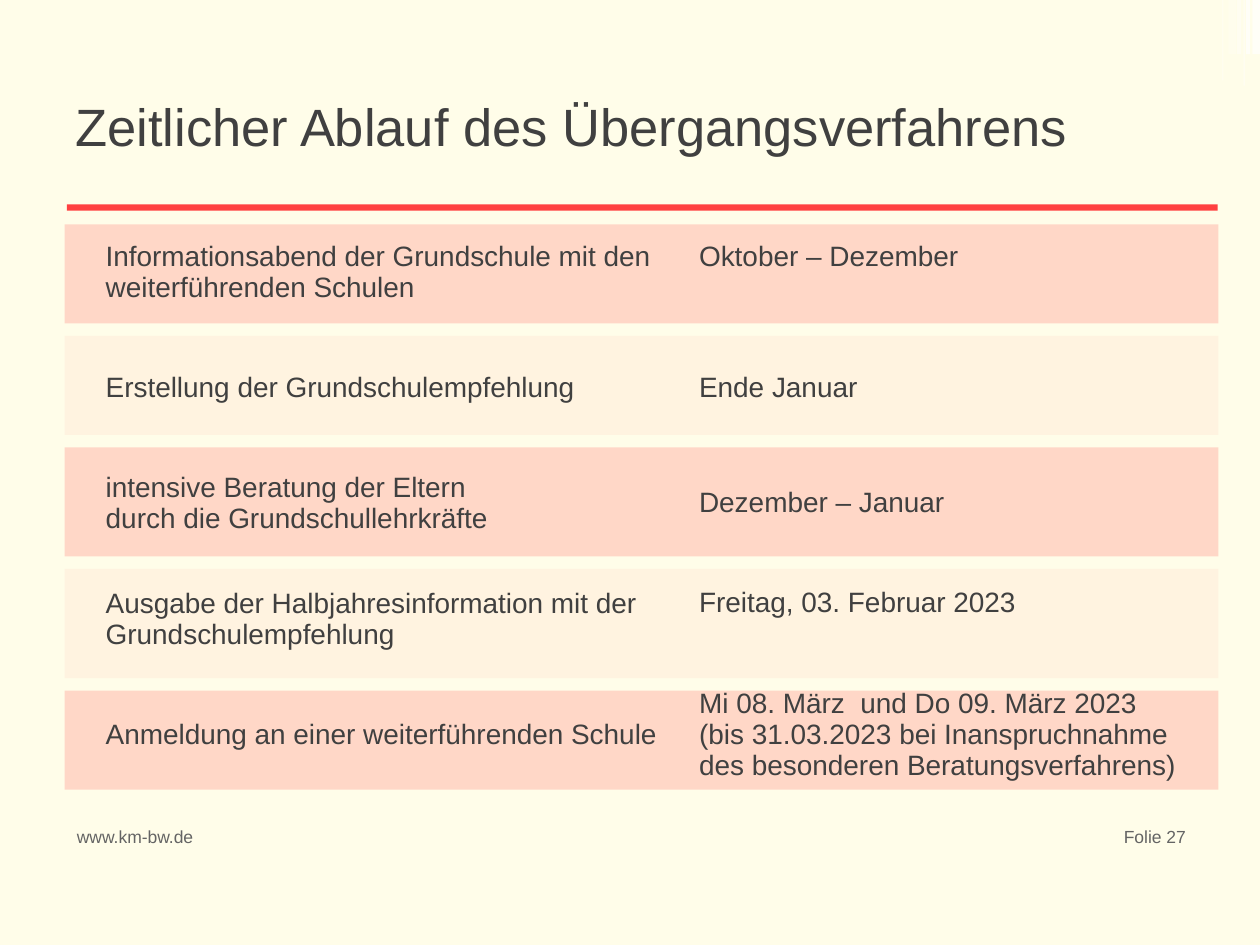
import pptx
import pptx.util
import pptx.dml.color
import pptx.enum.shapes
import pptx.enum.text
import lxml.etree

Pt = pptx.util.Pt
RGBColor = pptx.dml.color.RGBColor
ANCHOR = pptx.enum.text.MSO_ANCHOR
ALIGN = pptx.enum.text.PP_ALIGN

CREAM = RGBColor(0xFF, 0xFD, 0xE9)
WHITE = RGBColor(0xFF, 0xFF, 0xFF)
RED = RGBColor(0xFF, 0x40, 0x40)
ROSE = RGBColor(0xFF, 0x7F, 0x7F)
DARK = RGBColor(0x40, 0x40, 0x40)
GRAY = RGBColor(0x64, 0x64, 0x64)
NO_GRID_STYLE = "{2D5ABB26-0587-4C30-8999-92F81FD0307C}"


def write(frame, text, size=16, color=DARK, align=ALIGN.LEFT):
    """Fill a text frame, one paragraph per line of text."""
    frame.word_wrap = True
    frame.text = text
    for paragraph in frame.paragraphs:
        paragraph.alignment = align
        paragraph.font.size = Pt(size)
        paragraph.font.name = "Arial"
        paragraph.font.color.rgb = color


def add_bar(left, top, width, height, color, opacity=100):
    """Draw a borderless rectangle; opacity is in percent."""
    bar = slide.shapes.add_shape(
        pptx.enum.shapes.MSO_SHAPE.RECTANGLE,
        Pt(left), Pt(top), Pt(width), Pt(height))
    bar.shadow.inherit = False
    bar.line.fill.background()
    bar.fill.solid()
    bar.fill.fore_color.rgb = color
    if opacity < 100:
        rgb = bar.fill._xPr.find(".//" + pptx.oxml.ns.qn("a:srgbClr"))
        lxml.etree.SubElement(rgb, pptx.oxml.ns.qn("a:alpha"),
                              val=str(opacity * 1000))


presentation = pptx.Presentation()
presentation.slide_width, presentation.slide_height = Pt(720), Pt(540)
slide = presentation.slides.add_slide(presentation.slide_layouts[5])
slide.background.fill.solid()
slide.background.fill.fore_color.rgb = CREAM

# Faint white stripes in the top right corner
for left, width, height, opacity in [
        (712.1, 2.2, 31, 65), (715.7, 4.3, 31, 65), (698.4, 0.7, 46, 30),
        (710.6, 0.7, 49, 60), (702, 4.3, 31, 20), (707, 2.2, 31, 40)]:
    add_bar(left, 0, width, height, WHITE, opacity)

# Alternating bands behind the schedule
band_top = 128.2
for index, band_height in enumerate([56.6, 56.6, 62.4, 62.4, 56.6]):
    color, opacity = (ROSE, 8) if index % 2 else (RED, 20)
    add_bar(36.9, band_top, 659.4, band_height, color, opacity)
    band_top += band_height + 7.1

# Schedule: step, date, and whether the date sits on the step's first line
steps = [
    ("Informationsabend der Grundschule mit den weiterführenden Schulen",
     "Oktober – Dezember", True),
    ("Erstellung der Grundschulempfehlung", "Ende Januar", False),
    ("intensive Beratung der Eltern\ndurch die Grundschullehrkräfte",
     "Dezember – Januar", False),
    ("Ausgabe der Halbjahresinformation mit der Grundschulempfehlung",
     "Freitag, 03. Februar 2023", True),
    ("Anmeldung an einer weiterführenden Schule",
     "Mi 08. März  und Do 09. März 2023\n(bis 31.03.2023 bei "
     "Inanspruchnahme des besonderen Beratungsverfahrens)", False),
]
schedule = slide.shapes.add_table(
    len(steps), 2, Pt(53.2), Pt(122.4), Pt(629.3), Pt(330.5)).table
schedule.first_row = schedule.horz_banding = False
schedule._tbl.tblPr.find(pptx.oxml.ns.qn("a:tableStyleId")).text = NO_GRID_STYLE
schedule.columns[0].width = Pt(339.1)
schedule.columns[1].width = Pt(290.2)
for row, (step, date, on_first_line) in enumerate(steps):
    for column, text in enumerate((step, date)):
        cell = schedule.cell(row, column)
        cell.fill.background()
        cell.vertical_anchor = ANCHOR.MIDDLE
        write(cell.text_frame, text)
    if on_first_line:
        cell.margin_bottom = Pt(21.5)

# Footer
for left, width, text, align in [
        (36.9, 95.8, "www.km-bw.de", ALIGN.LEFT),
        (614.9, 69.8, "Folie 27", ALIGN.RIGHT)]:
    footer = slide.shapes.add_textbox(Pt(left), Pt(468.7), Pt(width), Pt(28))
    write(footer.text_frame, text, size=10, color=GRAY, align=align)

# Title with its rule
title = slide.shapes.title
title.left, title.top, title.width, title.height = Pt(36), Pt(44), Pt(648), Pt(55.4)
title.text_frame.auto_size = pptx.enum.text.MSO_AUTO_SIZE.NONE
title.text_frame.vertical_anchor = ANCHOR.MIDDLE
write(title.text_frame, "Zeitlicher Ablauf des Übergangsverfahrens", size=30)
add_bar(38.2, 116.8, 657.6, 3.6, RED)

presentation.save("out.pptx")
